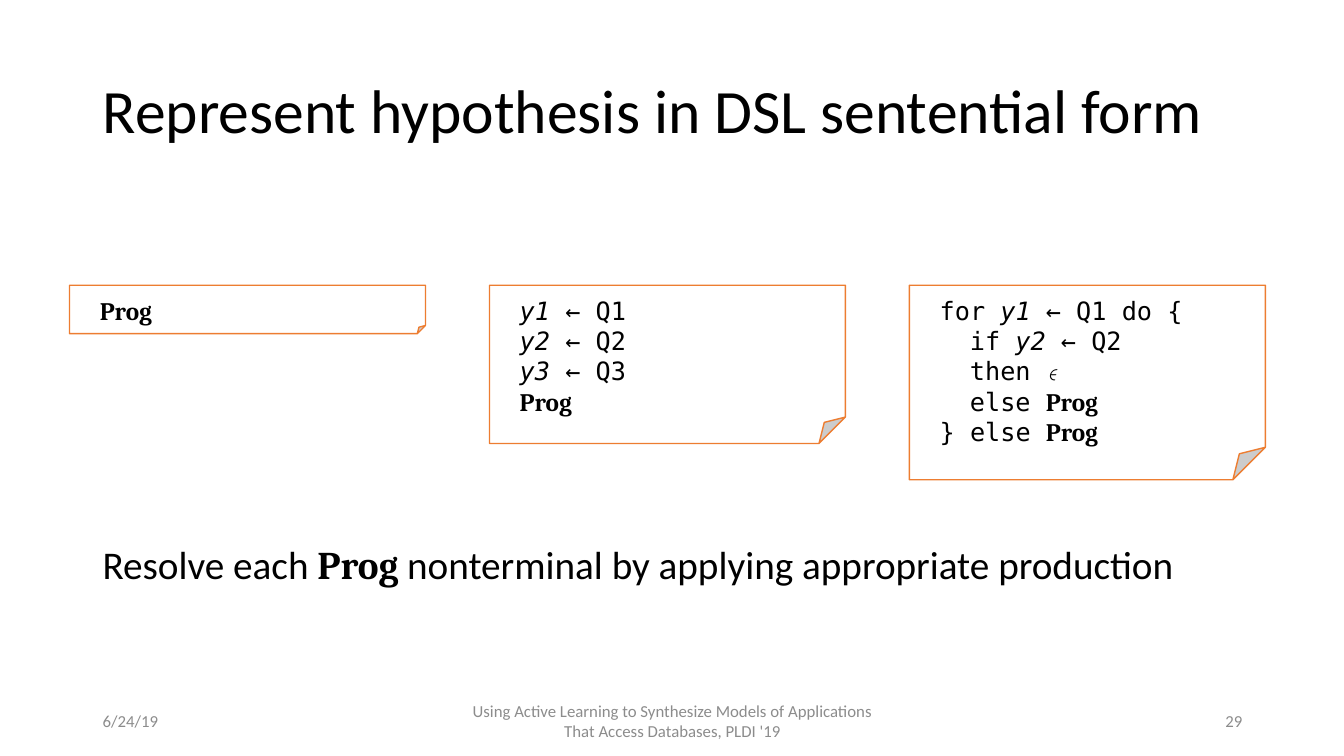
from pptx import Presentation
from pptx.dml.color import RGBColor
from pptx.enum.shapes import MSO_SHAPE
from pptx.enum.text import MSO_ANCHOR, MSO_AUTO_SIZE, PP_ALIGN
from pptx.util import Inches, Pt

# Content: a line is (indent level, runs), a run is (text, style)
TITLE = "Represent hypothesis in DSL sentential form"
PROG = ("Prog", "nonterminal")
NOTES = [  # (height, lines)
    (0.48, [(0, [PROG])]),
    (1.57, [(0, [(f"y{i} ", "variable"), (f"← Q{i}", "code")]) for i in (1, 2, 3)]
     + [(0, [PROG])]),
    (1.93, [
        (0, [("for ", "code"), ("y1 ", "variable"), ("← Q1 do {", "code")]),
        (1, [("if ", "code"), ("y2 ", "variable"), ("← Q2", "code")]),
        (1, [("then 𝜖", "code")]),
        (1, [("else ", "code"), PROG]),
        (0, [("} else ", "code"), PROG]),
    ]),
]
RULE = [("Resolve each ", "body"), ("Prog ", "nonterminal"),
        ("nonterminal by applying appropriate production", "body")]
FOOTER = [  # (left, width, alignment, text)
    (0.92, 3, PP_ALIGN.LEFT, "6/24/19"),
    (4.42, 4.5, PP_ALIGN.CENTER, "Using Active Learning to Synthesize Models of "
     "Applications That Access Databases, PLDI '19"),
    (9.42, 3, PP_ALIGN.RIGHT, "29"),
]

# Style: (font, bold, italic)
STYLES = {
    "body": ("Calibri", False, False),
    "code": ("DejaVu Sans Mono", False, False),
    "variable": ("DejaVu Sans Mono", False, True),
    "nonterminal": ("Cambria", True, False),
}
BLACK, GREY, WHITE, ORANGE = "000000", "8C8C8C", "FFFFFF", "ED7D31"
NOTE_LEFT, NOTE_TOP, NOTE_WIDTH, NOTE_STEP = 0.69, 2.83, 3.53, 4.165
CODE_INDENT = 0.3


def rgb(value):
    return RGBColor.from_string(value)


def add_runs(p, runs, size, color=BLACK):
    for text, style in runs:
        r = p.add_run()
        r.text = text
        r.font.name, r.font.bold, r.font.italic = STYLES[style]
        r.font.size = Pt(size)
        r.font.color.rgb = rgb(color)


def add_text(s, box, runs, size, color=BLACK, align=PP_ALIGN.LEFT,
             anchor=MSO_ANCHOR.MIDDLE, wrap=True):
    tf = s.shapes.add_textbox(*map(Inches, box)).text_frame
    tf.word_wrap = wrap
    tf.vertical_anchor = anchor
    p = tf.paragraphs[0]
    p.alignment = align
    add_runs(p, runs, size, color)
    return tf


def add_note(s, left, height, lines):
    sp = s.shapes.add_shape(MSO_SHAPE.FOLDED_CORNER, Inches(left), Inches(NOTE_TOP),
                            Inches(NOTE_WIDTH), Inches(height))
    sp.shadow.inherit = False
    sp.fill.solid()
    sp.fill.fore_color.rgb = rgb(WHITE)
    sp.line.color.rgb = rgb(ORANGE)
    sp.line.width = Pt(1)
    tf = sp.text_frame
    tf.word_wrap = True
    tf.auto_size = MSO_AUTO_SIZE.SHAPE_TO_FIT_TEXT
    tf.vertical_anchor = MSO_ANCHOR.TOP
    tf.margin_left = tf.margin_right = Inches(0.3)
    tf.margin_top, tf.margin_bottom = Inches(0.1), 0
    for i, (level, runs) in enumerate(lines):
        p = tf.add_paragraph() if i else tf.paragraphs[0]
        p.alignment = PP_ALIGN.LEFT
        if level:
            p._p.get_or_add_pPr().set("marL", str(Inches(CODE_INDENT * level)))
        add_runs(p, runs, 18)


def main():
    prs = Presentation()
    prs.slide_width, prs.slide_height = Inches(13.33), Inches(7.5)
    s = prs.slides.add_slide(prs.slide_layouts[6])

    # Title
    tf = add_text(s, (0.92, 0.4, 11.5, 1.45), [(TITLE, "body")], 44)
    tf.paragraphs[0].line_spacing = 0.9

    # Row of program notes
    for i, (height, lines) in enumerate(NOTES):
        add_note(s, NOTE_LEFT + i * NOTE_STEP, height, lines)

    # Rule below the notes
    tf = add_text(s, (0.92, 5.31, 10.93, 0.57), RULE, 28,
                  anchor=MSO_ANCHOR.TOP, wrap=False)
    tf.auto_size = MSO_AUTO_SIZE.SHAPE_TO_FIT_TEXT

    # Footer
    for left, width, align, text in FOOTER:
        add_text(s, (left, 6.95, width, 0.4), [(text, "body")], 12, GREY, align)

    prs.save("out.pptx")


if __name__ == "__main__":
    main()
